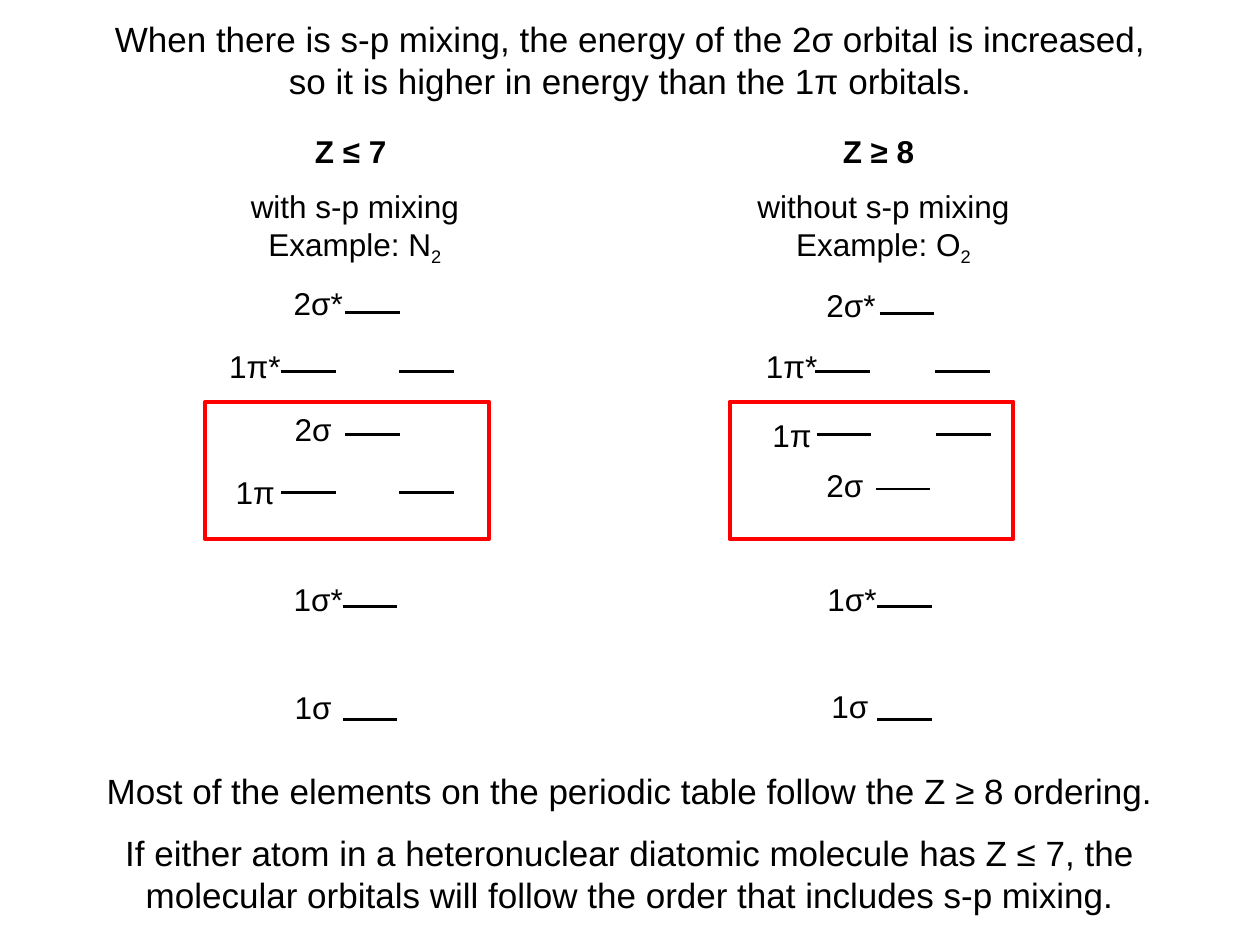
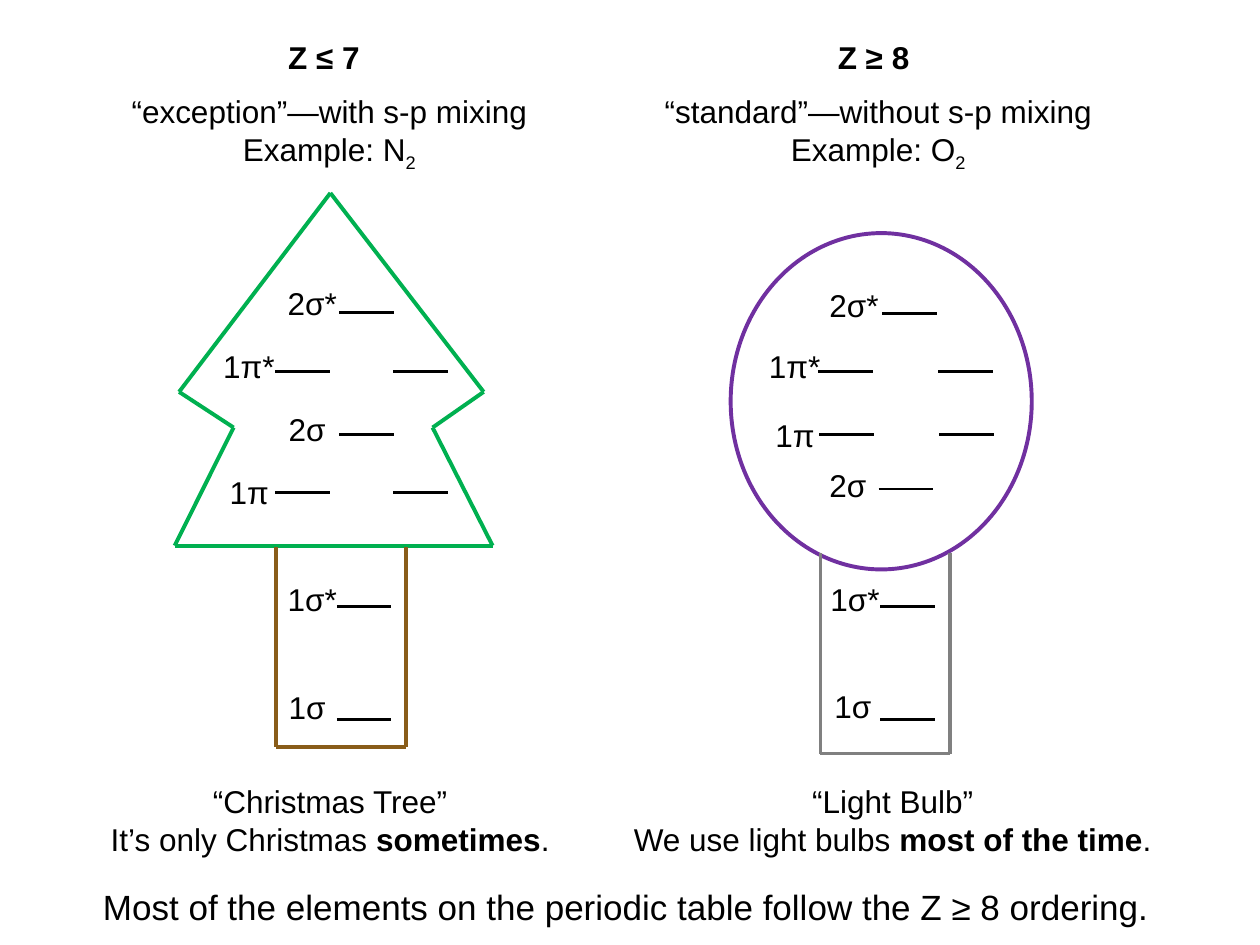
from lxml.etree import SubElement
from pptx import Presentation
from pptx.dml.color import RGBColor
from pptx.enum.shapes import MSO_CONNECTOR, MSO_SHAPE
from pptx.enum.text import MSO_ANCHOR, MSO_AUTO_SIZE, PP_ALIGN
from pptx.oxml.ns import qn
from pptx.util import Cm, Pt

# Shared style; all lengths below are in centimetres
COLORS = {
    "ink": "000000",
    "highlight": "FF0000",
    "crown": "00B050",
    "trunk": "895C19",
    "bulb": "7030A0",
    "socket": "808080",
}
FONT = "Arial"
BODY_SIZE, STATEMENT_SIZE = 18, 20
ORBITAL_LENGTH, ORBITAL_WEIGHT, OUTLINE_WEIGHT = 1.1, 1.5, 2.25
LINE_HEIGHT, PAIR_HEIGHT = 1.02, 1.8
HEADING_WIDTH, HEADING_STEP = 2.16, 1.1
LABEL_WIDTHS = {"σ": 1.27, "π": 1.32, "σ*": 1.52, "π*": 1.55}

# Energy levels: label, label x, label y, orbital y, orbital xs (x from the diagram's left)
MIXED_LEVELS = [
    ("2σ*", 1.3, 5.61, 6.3, [2.59]),
    ("1π*", 0, 6.88, 7.49, [1.3, 3.68]),
    ("2σ", 1.32, 8.15, 8.76, [2.59]),
    ("1π", 0.13, 9.42, 9.93, [1.3, 3.68]),
    ("1σ*", 1.3, 11.56, 12.22, [2.54]),
    ("1σ", 1.32, 13.74, 14.5, [2.54]),
]
UNMIXED_LEVELS = [
    ("2σ*", 1.22, 5.64, 6.32, [2.54]),
    ("1π*", 0, 6.88, 7.49, [1.24, 3.66]),
    ("1π", 0.13, 8.26, 8.76, [1.27, 3.68]),
    ("2σ", 1.22, 9.27, 9.86, [2.46]),
    ("1σ*", 1.24, 11.56, 12.22, [2.49]),
    ("1σ", 1.32, 13.72, 14.5, [2.49]),
]

# A paragraph is a list of (text, style) runs
N2_EXAMPLE = [("Example: N", ""), ("2", "sub")]
O2_EXAMPLE = [("Example: O", ""), ("2", "sub")]
ORDERING = "Most of the elements on the periodic table follow the Z ≥ 8 ordering."

MIXING_STATEMENT = ("When there is s-p mixing, the energy of the 2σ orbital is increased, "
                    "so it is higher in energy than the 1π orbitals.")
HETERONUCLEAR = ("If either atom in a heteronuclear diatomic molecule has Z ≤ 7, the "
                 "molecular orbitals will follow the order that includes s-p mixing.")

# Columns: heading and its left, caption with left and width, diagram left, levels
COMPARISON = [
    ("Z ≤ 7", 6.1, [[("with s-p mixing", "")], N2_EXAMPLE], 4.78, 4.75, 4.37, MIXED_LEVELS),
    ("Z ≥ 8", 16.74, [[("without s-p mixing", "")], O2_EXAMPLE], 14.99, 5.64, 15.19,
     UNMIXED_LEVELS),
]
MNEMONICS = [
    ("Z ≤ 7", 5.56, [[("“exception”—with s-p mixing", "")], N2_EXAMPLE], 2.36, 8.56, 4.25,
     MIXED_LEVELS),
    ("Z ≥ 8", 16.64, [[("“standard”—without s-p mixing", "")], O2_EXAMPLE], 13.11, 9.19, 15.25,
     UNMIXED_LEVELS),
]
HIGHLIGHT_LEFTS = [4.14, 14.71]

# Mnemonic captions: left, width, paragraphs
MNEMONIC_CAPTIONS = [
    (1.93, 9.45, [[("“Christmas Tree”", "")],
                  [("It’s only Christmas ", ""), ("sometimes", "bold"), (".", "")]]),
    (12.47, 11.05, [[("“Light Bulb”", "")],
                    [("We use light bulbs ", ""), ("most of the time", "bold"), (".", "")]]),
]

# Mnemonic outlines
CROWN = [(6.66, 3.89), (9.75, 7.9), (8.72, 8.62), (9.93, 11), (3.52, 11),
         (4.71, 8.62), (3.61, 7.9), (6.66, 3.89)]
STEMS = [("trunk", 5.56, 11.02), ("socket", 16.54, 11.15)]
STEM_WIDTH, STEM_HEIGHT = 2.62, 4.04


def color(name):
    return RGBColor.from_string(COLORS[name])


def box(left, top, width, height):
    return Cm(left), Cm(top), Cm(width), Cm(height)


def write(frame, paragraphs, size=BODY_SIZE, bold=False, align=PP_ALIGN.CENTER, gap=0):
    for index, runs in enumerate(paragraphs):
        paragraph = frame.paragraphs[0] if index == 0 else frame.add_paragraph()
        paragraph.alignment = align
        paragraph.space_before = Pt(gap if index else 0)
        font = paragraph.font
        font.name, font.size, font.bold = FONT, Pt(size), bold
        font.color.rgb = color("ink")
        for text, style in runs:
            run = paragraph.add_run()
            run.text = text
            if style == "bold":
                run.font.bold = True
            elif style == "sub":
                run._r.get_or_add_rPr().set("baseline", "-25000")


def add_text(slide, place, paragraphs, wrap=False, **style):
    frame = slide.shapes.add_textbox(*box(*place)).text_frame
    frame.word_wrap = wrap
    frame.auto_size = MSO_AUTO_SIZE.SHAPE_TO_FIT_TEXT
    write(frame, paragraphs, **style)


def add_line(slide, start, end, line_color, weight):
    line = slide.shapes.add_connector(
        MSO_CONNECTOR.STRAIGHT, *(Cm(value) for value in (*start, *end)))
    line.line.color.rgb = color(line_color)
    line.line.width = Pt(weight)
    SubElement(line._element.spPr, qn("a:effectLst"))


def add_outline(slide, points, line_color):
    for start, end in zip(points, points[1:]):
        add_line(slide, start, end, line_color, OUTLINE_WEIGHT)


def add_frame(slide, preset, place, line_color):
    frame = slide.shapes.add_shape(preset, *box(*place))
    frame.shadow.inherit = False
    frame.fill.background()
    frame.line.color.rgb = color(line_color)
    frame.line.width = Pt(OUTLINE_WEIGHT)


def add_levels(slide, left, levels):
    for label, label_x, label_y, orbital_y, orbital_xs in levels:
        for x in orbital_xs:
            add_line(slide, (left + x, orbital_y), (left + x + ORBITAL_LENGTH, orbital_y),
                     "ink", ORBITAL_WEIGHT)
        add_text(slide, (left + label_x, label_y, LABEL_WIDTHS[label[1:]], LINE_HEIGHT),
                 [[(label, "")]], align=PP_ALIGN.LEFT)


def add_columns(slide, columns, top):
    for heading, heading_left, caption, left, width, diagram_left, levels in columns:
        add_text(slide, (heading_left, top, HEADING_WIDTH, LINE_HEIGHT),
                 [[(heading, "")]], bold=True, align=PP_ALIGN.LEFT)
        add_text(slide, (left, top + HEADING_STEP, width, PAIR_HEIGHT), caption)
        add_levels(slide, diagram_left, levels)


def build_comparison(deck):
    slide = deck.slides.add_slide(deck.slide_layouts[5])

    # Title
    title = slide.shapes.title
    title.left, title.top, title.width, title.height = box(1.7, 0.23, 22.02, 1.96)
    title.text_frame.vertical_anchor = MSO_ANCHOR.TOP
    write(title.text_frame, [[(MIXING_STATEMENT, "")]], size=STATEMENT_SIZE)

    # Diagrams with the reordered levels framed
    add_columns(slide, COMPARISON, 2.54)
    for left in HIGHLIGHT_LEFTS:
        add_frame(slide, MSO_SHAPE.RECTANGLE, (left, 8.1, 5.72, 2.77), "highlight")

    # Conclusions
    add_text(slide, (1.45, 15.39, 22.5, 3.25), [[(ORDERING, "")], [(HETERONUCLEAR, "")]],
             wrap=True, size=STATEMENT_SIZE, gap=11.5)


def build_mnemonics(deck):
    slide = deck.slides.add_slide(deck.slide_layouts[6])
    add_columns(slide, MNEMONICS, 0.64)

    # Christmas tree and light bulb
    add_outline(slide, CROWN, "crown")
    add_frame(slide, MSO_SHAPE.OVAL, (14.73, 4.7, 6.07, 6.78), "bulb")
    for part, left, top in STEMS:
        right, bottom = left + STEM_WIDTH, top + STEM_HEIGHT
        add_outline(slide, [(left, top), (left, bottom), (right, bottom), (right, top)], part)

    # Captions and conclusion
    for left, width, caption in MNEMONIC_CAPTIONS:
        add_text(slide, (left, 15.65, width, PAIR_HEIGHT), caption)
    add_text(slide, (1.73, 17.73, 21.79, 1.12), [[(ORDERING, "")]],
             wrap=True, size=STATEMENT_SIZE)


def main():
    deck = Presentation()
    deck.slide_width, deck.slide_height = Cm(25.4), Cm(19.05)
    build_comparison(deck)
    build_mnemonics(deck)
    deck.save("out.pptx")


if __name__ == "__main__":
    main()
